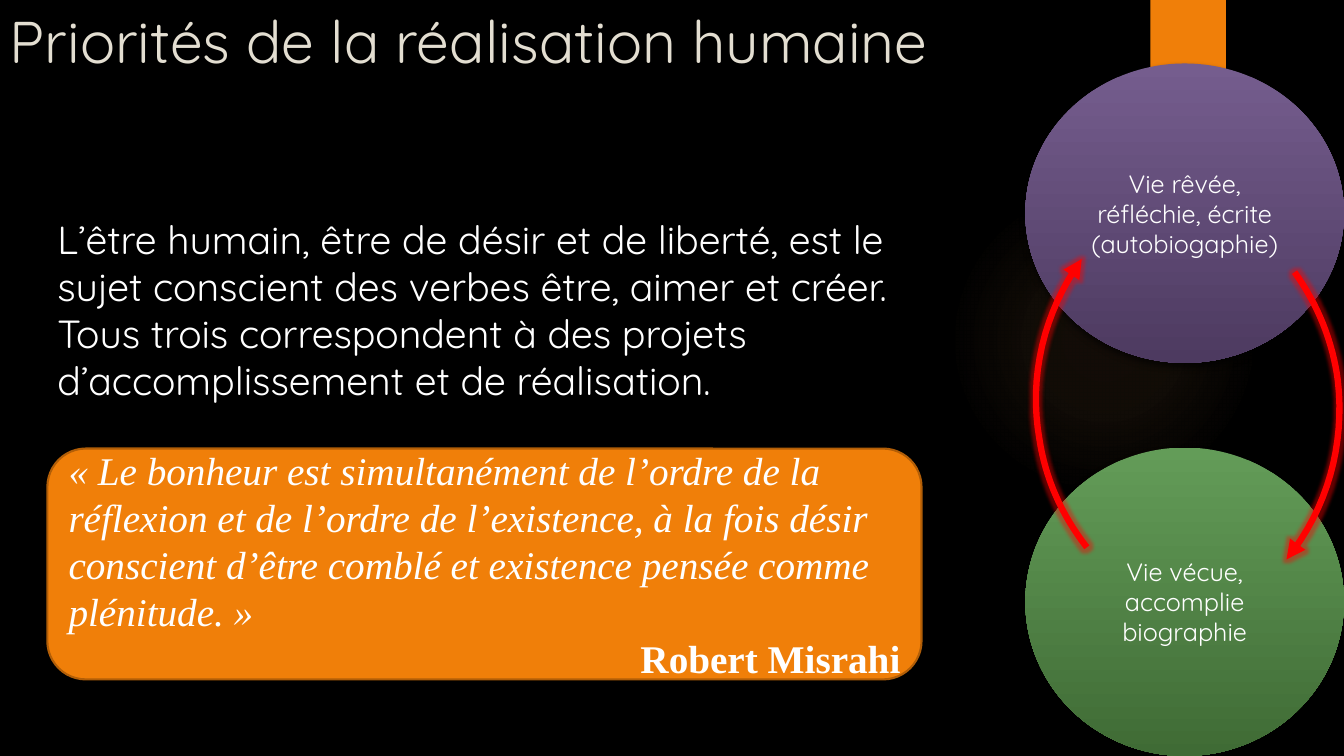
from lxml import etree
from pptx import Presentation
from pptx.dml.color import RGBColor
from pptx.enum.shapes import MSO_SHAPE as Shape
from pptx.enum.text import MSO_ANCHOR as Anchor, PP_ALIGN as Align
from pptx.oxml import parse_xml
from pptx.oxml.ns import nsdecls, qn
from pptx.util import Inches, Pt

BLACK = RGBColor(0x00, 0x00, 0x00)
WHITE = RGBColor(0xFF, 0xFF, 0xFF)
CREAM = RGBColor(0xE3, 0xDE, 0xD1)
ORANGE = RGBColor(0xF0, 0x7F, 0x09)
RUST = RGBColor(0xB2, 0x5E, 0x07)
RED = RGBColor(0xFF, 0x00, 0x00)
PURPLES = RGBColor(0x75, 0x5D, 0x8E), RGBColor(0x4D, 0x3A, 0x60)
GREENS = RGBColor(0x63, 0x9C, 0x58), RGBColor(0x3F, 0x6B, 0x35)
SANS, SERIF = "Quicksand", "Times New Roman"

# Content
TITLE = "Priorités de la réalisation humaine"
BODY = ("L’être humain, être de désir et de liberté, est le sujet conscient des verbes "
        "être, aimer et créer. Tous trois correspondent à des projets "
        "d’accomplissement et de réalisation.")
QUOTE = ("« Le bonheur est simultanément de l’ordre de la réflexion et de l’ordre de "
         "l’existence, à la fois désir conscient d’être comblé et existence pensée "
         "comme plénitude. »")
AUTHOR = "Robert Misrahi"
LIVES = [  # top, height, gradient colours, lines
    (0.63, 2.97, PURPLES, ["Vie rêvée, réfléchie, écrite", "(autobiogaphie)"]),
    (4.44, 3.06, GREENS, ["Vie vécue, accomplie", "biographie"]),
]
ARROWS = [  # Bezier points: start, then three for each curve
    [(10.78, 5.43), (10.53, 5.11), (10.37, 4.75), (10.31, 4.36),
     (10.2, 3.74), (10.35, 3.1), (10.73, 2.57)],
    [(12.84, 2.7), (13.07, 3.02), (13.22, 3.39), (13.27, 3.78),
     (13.34, 4.41), (13.17, 5.04), (12.76, 5.55)],
]
CURVE_STEPS = 16

deck = Presentation()
deck.slide_width, deck.slide_height = Inches(13.33), Inches(7.5)
page = deck.slides.add_slide(deck.slide_layouts[6])
page.background.fill.solid()
page.background.fill.fore_color.rgb = BLACK


def add_shape(kind, left, top, width, height, color=None):
    shape = page.shapes.add_shape(kind, *map(Inches, (left, top, width, height)))
    shape.shadow.inherit = False
    shape.line.fill.background()
    if color is not None:
        shape.fill.solid()
        shape.fill.fore_color.rgb = color
    return shape


def add_effect(shape, effect):
    effects = shape._element.spPr.find(qn("a:effectLst"))
    effects.append(parse_xml(effect))


def cast_shadow(shape, alpha, blur, distance):
    add_effect(shape, f'<a:outerShdw {nsdecls("a")} blurRad="{Pt(blur)}" '
               f'dist="{Pt(distance)}" dir="5400000" rotWithShape="0">'
               f'<a:srgbClr val="{BLACK}"><a:alpha val="{alpha * 1000}"/>'
               '</a:srgbClr></a:outerShdw>')


def add_text(frame, text, size, font, color=WHITE, align=Align.LEFT,
             spacing=None, first=True, bold=False, italic=False):
    para = frame.paragraphs[0] if first else frame.add_paragraph()
    para.alignment = align
    if spacing:
        para.line_spacing = Pt(spacing)
    span = para.add_run()
    span.text = text
    span.font.name, span.font.size, span.font.color.rgb = font, Pt(size), color
    span.font.bold, span.font.italic = bold, italic


def add_box(left, top, width, height):
    box = page.shapes.add_textbox(*map(Inches, (left, top, width, height)))
    box.text_frame.word_wrap = True
    return box.text_frame


def curve_points(points):
    """Sample the joined cubic curves after their start point."""
    for start in range(0, len(points) - 1, 3):
        corners = points[start:start + 4]
        for step in range(1, CURVE_STEPS + 1):
            t = step / CURVE_STEPS
            weights = ((1 - t) ** 3, 3 * t * (1 - t) ** 2, 3 * t * t * (1 - t), t ** 3)
            yield tuple(Inches(sum(w * c[axis] for w, c in zip(weights, corners)))
                        for axis in (0, 1))


# Backdrop: soft halo and top tab
halo = add_shape(Shape.OVAL, 9.41, 1.83, 3.08, 3.08, ORANGE)
stops = "".join(f'<a:gs pos="{pos * 1000}"><a:srgbClr val="F9B268">'
                f'<a:alpha val="{alpha * 1000}"/></a:srgbClr></a:gs>'
                for pos, alpha in ((0, 7), (36, 6), (69, 0), (100, 0)))
solid = halo._element.spPr.find(qn("a:solidFill"))
solid.getparent().replace(solid, parse_xml(
    f'<a:gradFill {nsdecls("a")}><a:gsLst>{stops}</a:gsLst><a:path path="circle">'
    '<a:fillToRect l="50000" t="50000" r="50000" b="50000"/></a:path></a:gradFill>'))
tab = add_shape(Shape.RECTANGLE, 11.41, 0, 0.75, 1.25, ORANGE)
cast_shadow(tab, 45, 3, 2)

# Title and body
add_text(add_box(0, 0, 11.36, 1.53), TITLE, 42, SANS, CREAM)
add_text(add_box(0.47, 2.09, 9.23, 2.23), BODY, 28, SANS, spacing=33.6)

# Two lives
for top, height, colors, lines in LIVES:
    life = add_shape(Shape.OVAL, 10.17, top, 3.16, height)
    life.fill.gradient()
    life.fill.gradient_angle = 270
    for stop, position, color in zip(life.fill.gradient_stops, (0, 1), colors):
        stop.position, stop.color.rgb = position, color
    cast_shadow(life, 60, 5, 3)
    life.text_frame.word_wrap = True
    life.text_frame.vertical_anchor = Anchor.MIDDLE
    for index, line in enumerate(lines):
        add_text(life.text_frame, line, 18, SANS, align=Align.CENTER,
                 spacing=21.5, first=index == 0)

# Quotation
quote = add_shape(Shape.ROUNDED_RECTANGLE, 0.47, 4.45, 8.67, 2.29, ORANGE)
quote.line.color.rgb, quote.line.width = RUST, Pt(1.5)
quote.text_frame.word_wrap = True
quote.text_frame.vertical_anchor = Anchor.MIDDLE
add_text(quote.text_frame, QUOTE, 28, SERIF, spacing=33.6, italic=True)
add_text(quote.text_frame, AUTHOR, 28, SERIF, align=Align.RIGHT, spacing=33.6,
         first=False, bold=True)

# Curved arrows between the lives
for points in ARROWS:
    builder = page.shapes.build_freeform(*map(Inches, points[0]))
    builder.add_line_segments(list(curve_points(points)), close=False)
    arrow = builder.convert_to_shape()
    arrow.shadow.inherit = False
    arrow.fill.background()
    arrow.line.color.rgb, arrow.line.width = RED, Pt(4.5)
    etree.SubElement(arrow.line._get_or_add_ln(), qn("a:tailEnd"), type="triangle")
    add_effect(arrow, f'<a:glow {nsdecls("a")} rad="{Pt(5)}"><a:srgbClr val="{RED}">'
               '<a:alpha val="40000"/></a:srgbClr></a:glow>')

deck.save("out.pptx")
